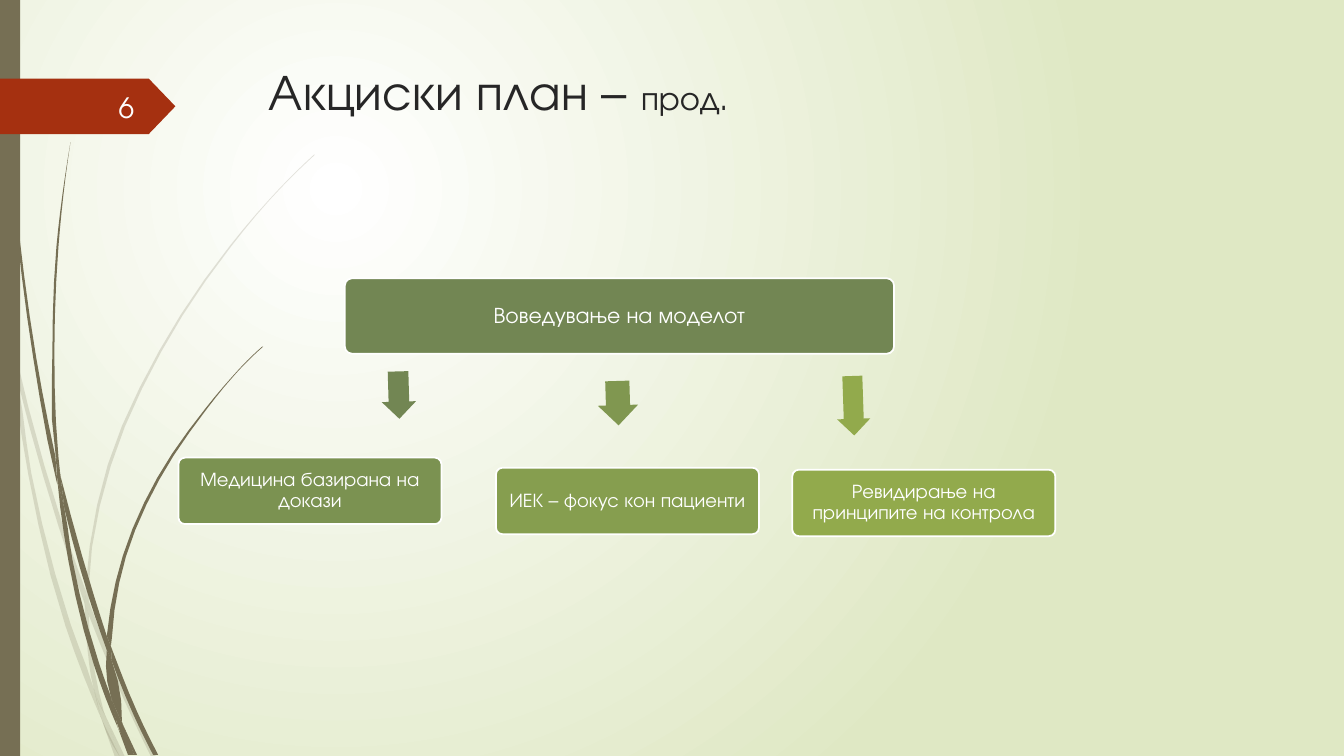
from collections import namedtuple
from math import dist

from lxml import etree
from pptx import Presentation
from pptx import util as u
from pptx.dml.color import RGBColor
from pptx.enum import shapes, text
from pptx.oxml.ns import qn

# The slide is a grid of square cells, 75 rows high
CELL = u.Inches(0.1)
COLUMNS, ROWS = 133.33, 75
FONT = "TeX Gyre Adventor"
COLORS = {
    "white": "FFFFFF", "mist": "DFE8C4", "bark": "766F54", "rust": "A53010",
    "ink": "262626", "number": "FEFFFF", "root": "728653", "evidence": "7B9251",
    "middle": "809750", "patients": "869E4F", "control": "92AA4C",
}
Box = namedtuple("Box", "left top width height")
KIND = shapes.MSO_SHAPE
ALIGN = text.PP_ALIGN
ANCHOR = text.MSO_ANCHOR

# Each piece of grass: the points along one edge, then back along the other
PALE_GRASS = [
    ([(1.1, 35), (0.9, 32.2), (0, 28.2)], [(0, 29.9), (1, 34.4)]),
    ([(1.7, 37.6), (5.8, 52.2), (8.4, 59.9)], [(8.5, 58.6), (6.2, 52), (1.4, 34.5)]),
    ([(8.8, 59.6), (9.2, 60.7), (12.7, 69.2), (15.5, 75.1)],
     [(15, 75.1), (12.3, 69.4), (8.8, 61)]),
    ([(10.5, 71.1), (12.4, 75.1)], [(11.9, 75.1)]),
    ([(1.1, 35), (1.7, 37.6), (3.1, 46.9), (7, 61.9), (9.3, 68.3), (9.9, 70.7)],
     [(10.1, 71.4), (9.2, 69.3), (6.5, 62.1), (2.8, 47), (1.1, 35)]),
    ([(8.4, 59.9), (8.7, 64.6), (9.3, 68.3), (9.6, 69.2), (10.5, 71.1)],
     [(10.3, 70.6), (9.1, 64.6), (8.8, 61)]),
    ([(8.8, 59.6), (8.8, 58.4), (11, 46.2), (16, 34.9), (22.9, 24.5), (26.8, 19.8),
      (29, 17.5), (31.2, 15.4)],
     [(31.2, 15.3), (28.9, 17.5), (26.8, 19.7), (22.8, 24.4), (15.8, 34.8),
      (10.7, 46.1), (8.5, 58.4)]),
    ([(10.1, 71.4), (11.4, 75.1)], [(11.9, 75.1)]),
    ([(8.8, 61), (8.8, 59.6)], [(8.5, 58.6), (8.4, 59.9)]),
    ([(9.3, 68.3), (9.9, 70.7), (10.1, 71.4), (11.9, 75.1)], [(10.5, 71.1), (9.6, 69.2)]),
]
DARK_GRASS = [
    ([(0.7, 11), (1.7, 23.3), (3.3, 35.5), (5.6, 47.7), (5.7, 48.1)],
     [(5.5, 45.3), (3.6, 35.5), (1.9, 23.2), (0.8, 10.9), (0.5, 4.8), (0.4, 0)],
     [(0.3, 0), (0.4, 4.8)]),
    ([(6.4, 50.5), (8.8, 59.2), (10.6, 64.5)], [(10.6, 63.1), (9.3, 59), (6, 47.2)]),
    ([(11, 64.1), (11.3, 64.9), (13.6, 70.6), (15.7, 74.9)],
     [(15.2, 74.9), (13.2, 70.8), (11.1, 65.6)]),
    ([(11, 69.1), (9.8, 65.7), (7.2, 55.6), (6.4, 50.5), (5.7, 47.7)],
     [(5.7, 47.7), (6.8, 55.7), (9.3, 65.9), (11.1, 70.8), (11.7, 72.2)]),
    ([(6, 47.2), (5.8, 45.3), (5.4, 34.9), (5.8, 24.5), (6.3, 19.3), (7, 14.1)],
     [(7, 14.1), (6.2, 19.3), (5.6, 24.5), (5.2, 34.9), (5.5, 44.9), (6, 47.2)]),
    ([(12.2, 71.9), (13.3, 74.9)], [(13.6, 74.9)]),
    ([(5.7, 47.7), (6.4, 50.5)], [(6, 47.2), (5.5, 44.9)]),
    ([(11.1, 63.3), (12.5, 55.2), (15.8, 47.6), (20.5, 40.6), (23.1, 37.4),
      (24.5, 35.9), (26.1, 34.4)],
     [(26, 34.4), (24.5, 35.8), (23.1, 37.3), (20.4, 40.5), (15.6, 47.4),
      (12.2, 55.1), (10.6, 63.1)], [(11, 64.1)]),
    ([(11.7, 72.2), (12.7, 74.9)], [(13.1, 74.9)]),
    ([(10.6, 64.5), (11, 69.1), (11.6, 70.6), (12.2, 71.9)],
     [(12.1, 71.6), (11.1, 65.6), (10.9, 65.1)]),
    ([(10.6, 64.5), (11.1, 65.6)], [(11, 64.1), (10.6, 63.1)]),
    ([(11, 69.1), (11.6, 71.7), (13, 74.9)], [(13.3, 74.9), (12.2, 71.9), (11.6, 70.6)]),
]


def color(name):
    return RGBColor.from_string(COLORS[name])


def cells(*values):
    return [round(value * CELL) for value in values]


def inside(region, left, top, width, height):
    return Box(region.left + left, region.top + top, width, height)


def paint(shape, fill, line=None, alpha=None):
    shape.shadow.inherit = False
    shape.fill.solid()
    shape.fill.fore_color.rgb = color(fill)
    if line:
        shape.line.color.rgb = color(line)
        shape.line.width = u.Pt(1.25)
    else:
        shape.line.fill.background()
    if alpha:
        tint = shape.element.spPr.find(qn("a:solidFill")).find(qn("a:srgbClr"))
        etree.SubElement(tint, qn("a:alpha"), val=str(alpha * 1000))


def add_block(page, kind, box, fill, line=None, adjust=(), turn=0):
    block = page.shapes.add_shape(kind, *cells(*box))
    paint(block, fill, line)
    for index, value in enumerate(adjust):
        block.adjustments[index] = value
    block.rotation = turn


def add_text(page, box, spans, ink, align=ALIGN.LEFT, anchor=ANCHOR.TOP, inset=None,
             spacing=None):
    """Place one paragraph of (words, size) spans."""
    frame = page.shapes.add_textbox(*cells(*box)).text_frame
    frame.word_wrap = True
    frame.vertical_anchor = anchor
    if inset is not None:
        frame.margin_left = frame.margin_right = u.Inches(inset)
        frame.margin_top = frame.margin_bottom = u.Inches(inset)
    para = frame.paragraphs[0]
    para.alignment = align
    if spacing:
        para.line_spacing = spacing
    for words, size in spans:
        span = para.add_run()
        span.text = words
        span.font.size = u.Pt(size)
        span.font.name = FONT
        span.font.color.rgb = color(ink)


def smooth(points, steps=3):
    """Bend an edge through its points, with slopes weighted by the gaps between them."""
    if len(points) < 3:
        return points
    gaps = [dist(a, b) for a, b in zip(points, points[1:])]
    rates = [[(q - p) / gap for p, q in zip(a, b)]
             for a, b, gap in zip(points, points[1:], gaps)]
    slopes = [[(p * after + q * before) / (before + after) for p, q in zip(r, s)]
              for r, s, before, after in zip(rates, rates[1:], gaps, gaps[1:])]
    first = [2 * p - q for p, q in zip(rates[0], slopes[0])]
    last = [2 * p - q for p, q in zip(rates[-1], slopes[-1])]
    slopes = [first, *slopes, last]
    curve = [points[0]]
    for a, b, m, n, gap in zip(points, points[1:], slopes, slopes[1:], gaps):
        for t in (step / steps for step in range(1, steps + 1)):
            ease = t * t * (3 - 2 * t)
            curve.append([p + (q - p) * ease
                          + gap * t * (1 - t) * (v * (1 - t) - w * t)
                          for p, q, v, w in zip(a, b, m, n)])
    return curve


def draw_background(page):
    fill = page.background.fill
    fill.gradient()
    for stop, name, position in zip(fill.gradient_stops, ("white", "mist"), (0, 1)):
        stop.color.rgb = color(name)
        stop.position = position
    gradient = next(page.element.iter(qn("a:gradFill")))
    gradient.remove(gradient.find(qn("a:lin")))
    circle = etree.SubElement(gradient, qn("a:path"), path="circle")
    etree.SubElement(circle, qn("a:fillToRect"), l="50000", t="50000", r="100000", b="100000")


def draw_grass(page, region):
    for pieces, alpha in ((PALE_GRASS, 20), (DARK_GRASS, None)):
        for edges in pieces:
            outline = [cells(region.left + x, region.top + y)
                       for edge in edges for x, y in smooth(edge)]
            builder = page.shapes.build_freeform(*outline[0], scale=1.0)
            builder.add_line_segments(outline[1:], close=True)
            paint(builder.convert_to_shape(), "bark", alpha=alpha)
    add_block(page, KIND.RECTANGLE, inside(region, 0, 0, 2, region.height), "bark")


def draw_number_tag(page, region):
    add_block(page, KIND.PENTAGON, region, "rust", adjust=[0.48])
    add_text(page, inside(region, 5.8, 0.8, 8.5, 4), [("6", 20)], "number",
             align=ALIGN.RIGHT, anchor=ANCHOR.MIDDLE)


def draw_title(page, region):
    add_text(page, region, [("Акциски план – ", 36), ("прод.", 24)], "ink")


def draw_diagram(page, region):
    # Cards: place, fill, words, size
    cards = [
        ((16.5, 0, 54.5, 7.5), "root", "Воведување на моделот", 16),
        ((0, 17.8, 26.1, 6.6), "evidence", "Медицина базирана на докази", 14),
        ((31.5, 18.8, 26.1, 6.6), "patients", "ИЕК – фокус кон пациенти", 14),
        ((60.9, 19, 26.1, 6.6), "control", "Ревидирање на принципите на контрола", 14),
    ]
    for place, fill, words, size in cards:
        card = inside(region, *place)
        add_block(page, KIND.ROUNDED_RECTANGLE, card, fill, line="white", adjust=[0.1])
        add_text(page, inside(card, 0.2, 0.2, card.width - 0.4, card.height - 0.4),
                 [(words, size)], "white", align=ALIGN.CENTER, anchor=ANCHOR.MIDDLE,
                 inset=0.06, spacing=0.9)

    # Arrows from the root card to the branches
    arrows = [
        ((19.5, 9.9, 4.7, 3.4), "root", 88.4),
        ((41.4, 10.4, 4.4, 4), "middle", 88.3),
        ((64, 11, 5.9, 3.3), "control", 88.1),
    ]
    for place, fill, turn in arrows:
        add_block(page, KIND.RIGHT_ARROW, inside(region, *place), fill,
                  adjust=[0.6, 0.5], turn=turn)


def main():
    deck = Presentation()
    deck.slide_width, deck.slide_height = cells(COLUMNS, ROWS)
    page = deck.slides.add_slide(deck.slide_layouts[6])
    draw_background(page)
    draw_grass(page, Box(0, 0, 31.2, ROWS))
    draw_number_tag(page, Box(0, 7.8, 17.4, 5.5))
    draw_diagram(page, Box(17.7, 27.6, 87, 25.6))
    draw_title(page, Box(25.7, 5.5, 59.9, 7.2))
    deck.save("out.pptx")


if __name__ == "__main__":
    main()
